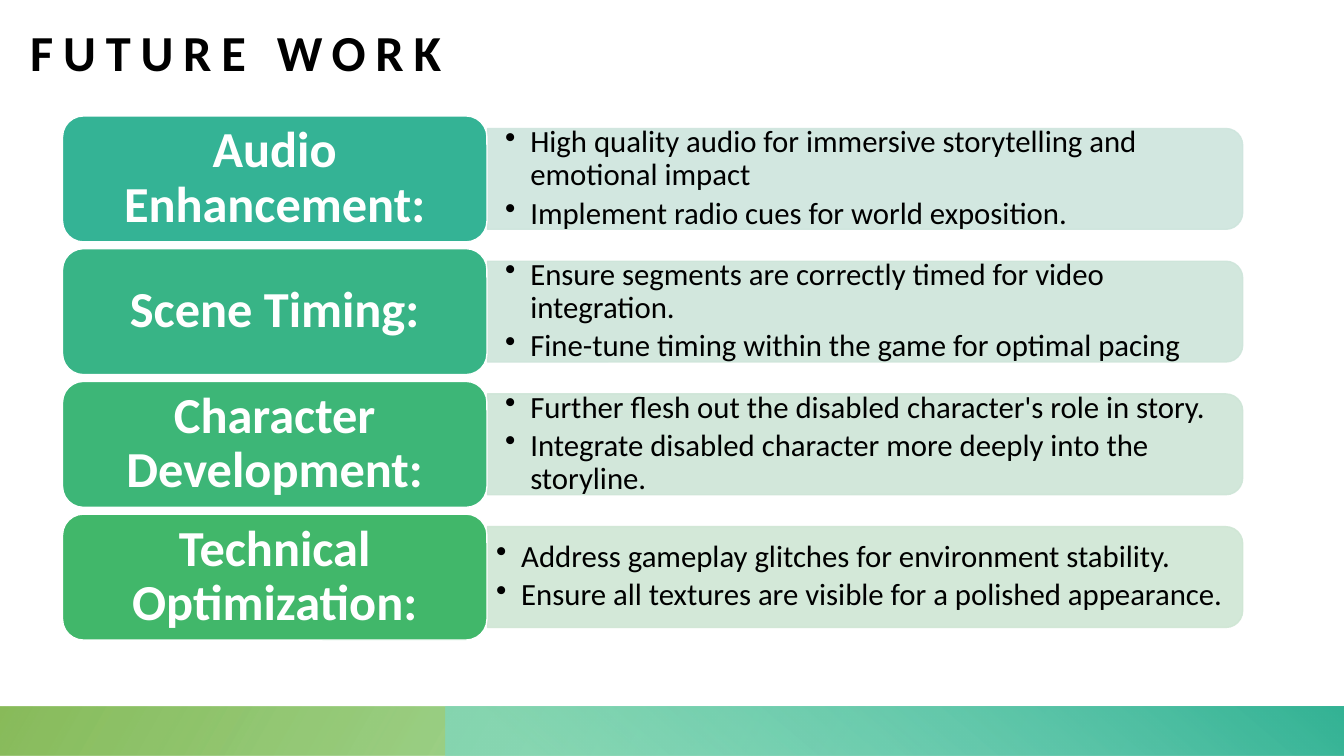
from lxml.etree import SubElement
from pptx import Presentation
from pptx.dml.color import RGBColor
from pptx.enum.shapes import MSO_SHAPE
from pptx.enum.text import MSO_ANCHOR, PP_ALIGN
from pptx.oxml.ns import qn
from pptx.util import Inches, Pt


def color(hex_string):
    return RGBColor.from_string(hex_string)


def set_opacity(shape, percents):
    for tint, percent in zip(shape._element.spPr.iter(qn("a:srgbClr")), percents):
        SubElement(tint, qn("a:alpha"), val=str(percent * 1000))


prs = Presentation()
prs.slide_width = Inches(13.33)
prs.slide_height = Inches(7.5)
slide = prs.slides.add_slide(prs.slide_layouts[6])

heading = slide.shapes.add_textbox(Inches(0.3), Inches(0.21), Inches(5.02), Inches(0.7))
heading_frame = heading.text_frame
heading_frame.word_wrap = True
heading_frame.margin_left = heading_frame.margin_right = 0
heading_frame.margin_top = heading_frame.margin_bottom = 0
title = heading_frame.paragraphs[0]
title.text = "FUTURE WORK"
title.font.name = "Calibri"
title.font.size = Pt(36)
title.font.bold = True
title.font.color.rgb = color("000000")
title.runs[0].font._element.set("spc", "700")

footer_bands = [
    (0, 13.33, 180, 150, [(0.14, "3EB735", 28), (1, "75B03E", 85)]),
    (4.42, 8.92, 0, 230, [(0.09, "7DD9C4", 68), (0.99, "34B395", 100)]),
]
for left, width, rotation, angle, stops in footer_bands:
    band = slide.shapes.add_shape(
        MSO_SHAPE.RECTANGLE, Inches(left), Inches(7.01), Inches(width), Inches(0.49))
    band.shadow.inherit = False
    band.rotation = rotation
    band._element.spPr.xfrm.set("flipH", "1")
    band.line.fill.background()
    band.fill.gradient()
    band.fill.gradient_angle = 360 - angle
    for stop, (position, tint, _) in zip(band.fill.gradient_stops, stops):
        stop.position = position
        stop.color.rgb = color(tint)
    set_opacity(band, [opacity for _, _, opacity in stops])

topics = [
    ("Audio Enhancement:", "34B395", "CEE5DD", 0.18, [
        "High quality audio for immersive storytelling and emotional impact",
        "Implement radio cues for world exposition."]),
    ("Scene Timing:", "38B486", "CEE5DA", 0.18, [
        "Ensure segments are correctly timed for video integration.",
        "Fine-tune timing within the game for optimal pacing"]),
    ("Character Development:", "3DB677", "CEE5D7", 0.18, [
        "Further flesh out the disabled character's role in story.",
        "Integrate disabled character more deeply into the storyline."]),
    ("Technical Optimization:", "41B76A", "CFE6D4", 0.09, [
        "Address gameplay glitches for environment stability.",
        "Ensure all textures are visible for a polished appearance."]),
]
for row, (topic, topic_color, bar_color, inset, plans) in enumerate(topics):
    top = 1.15 + row * 3.95 / 3

    bar = slide.shapes.add_shape(
        MSO_SHAPE.ROUND_2_SAME_RECTANGLE,
        Inches(8.08), Inches(top - 3.12), Inches(1), Inches(7.49))
    bar.rotation = 90
    bar.shadow.inherit = False
    bar.fill.solid()
    bar.fill.fore_color.rgb = color(bar_color)
    bar.line.color.rgb = color(bar_color)
    bar.line.width = Pt(1)
    set_opacity(bar, [90, 90])

    details = slide.shapes.add_textbox(
        Inches(4.83), Inches(top + 0.17), Inches(7.44), Inches(0.9))
    details_frame = details.text_frame
    details_frame.word_wrap = True
    details_frame.vertical_anchor = MSO_ANCHOR.MIDDLE
    details_frame.margin_left = details_frame.margin_right = Inches(inset)
    details_frame.margin_top = details_frame.margin_bottom = Inches(inset / 2)
    details_frame.text = "\n".join(plans)
    for plan in details_frame.paragraphs:
        plan.line_spacing = 0.9
        plan.space_after = Pt(3.5)
        plan.font.name = "Calibri"
        plan.font.size = Pt(22)
        plan.font.color.rgb = color("000000")
        properties = plan._p.get_or_add_pPr()
        properties.set("marL", str(Inches(0.25)))
        properties.set("indent", str(Inches(-0.25)))
        bullet = properties.makeelement(qn("a:buChar"), {"char": "•"})
        properties.find(qn("a:defRPr")).addprevious(bullet)

    label = slide.shapes.add_shape(
        MSO_SHAPE.ROUNDED_RECTANGLE, Inches(0.62), Inches(top), Inches(4.21), Inches(1.25))
    label.shadow.inherit = False
    label.fill.solid()
    label.fill.fore_color.rgb = color(topic_color)
    label.line.color.rgb = color("FFFFFF")
    label.line.width = Pt(1)
    label_frame = label.text_frame
    label_frame.word_wrap = True
    label_frame.vertical_anchor = MSO_ANCHOR.MIDDLE
    label_frame.margin_left = label_frame.margin_right = Inches(0.15)
    label_frame.margin_top = label_frame.margin_bottom = Inches(0.07)
    label_text = label_frame.paragraphs[0]
    label_text.text = topic
    label_text.alignment = PP_ALIGN.CENTER
    label_text.line_spacing = 0.9
    label_text.font.name = "Calibri"
    label_text.font.size = Pt(36)
    label_text.font.bold = True
    label_text.font.color.rgb = color("FFFFFF")

prs.save("out.pptx")
